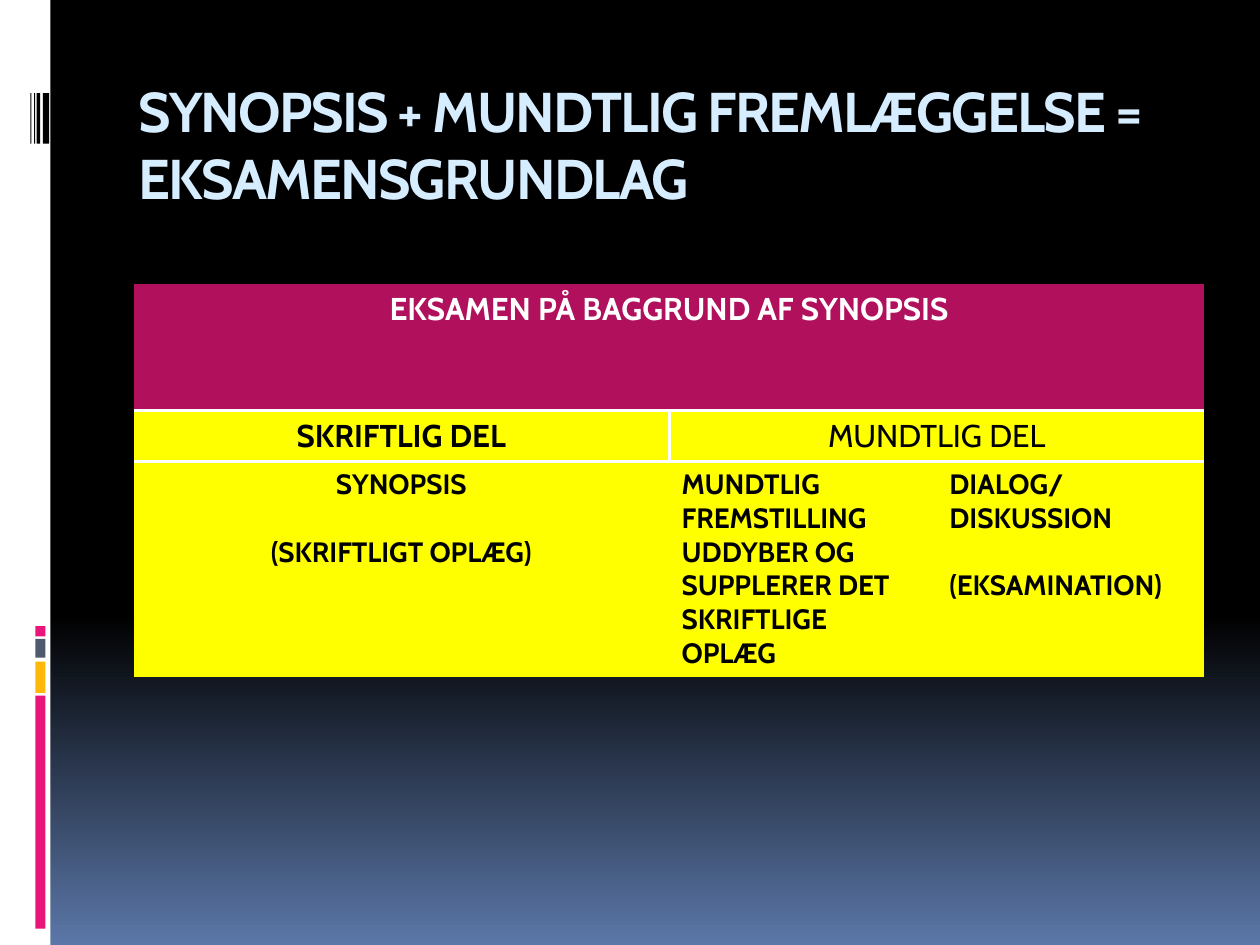
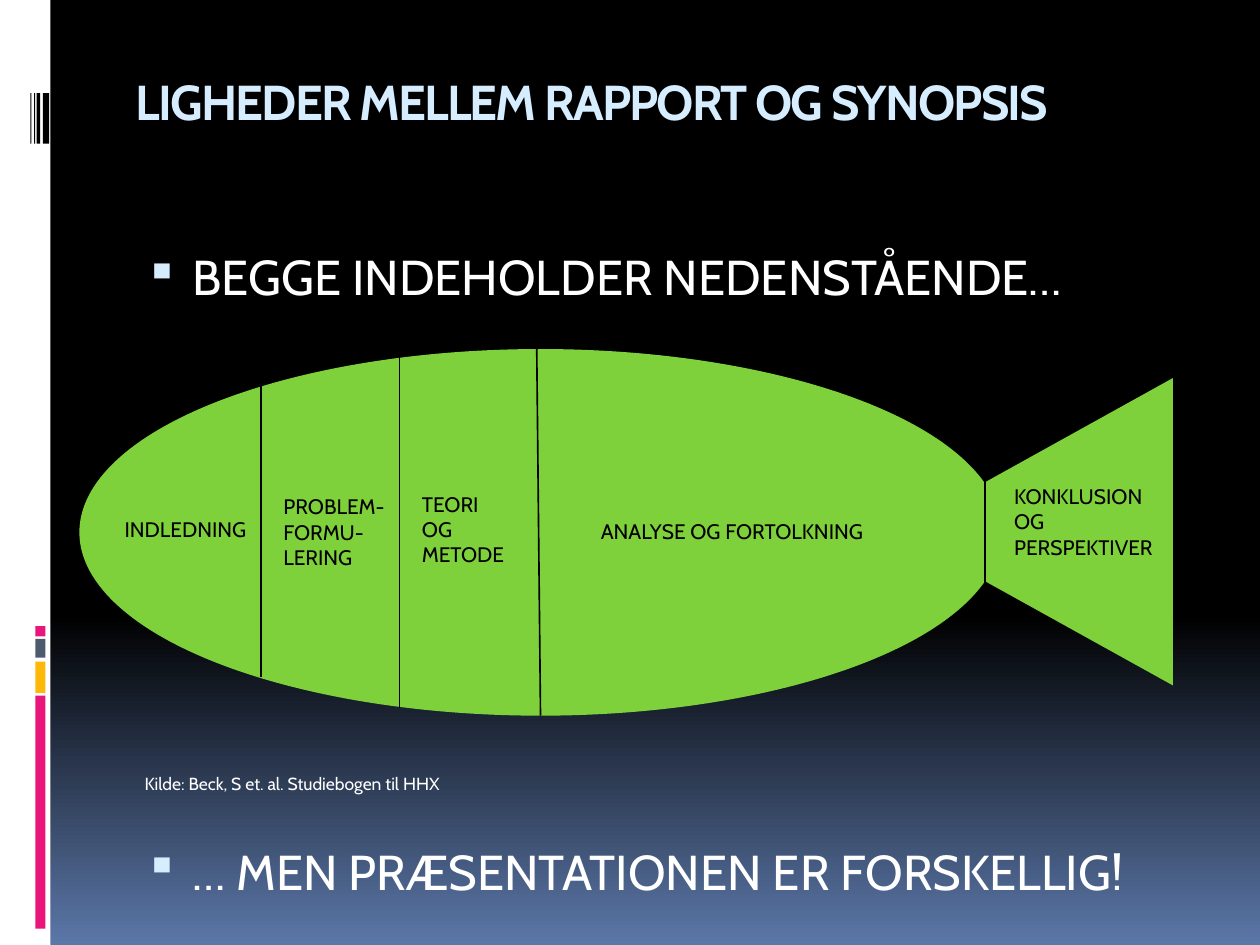
import copy

import lxml.etree
import pptx
import pptx.dml.color
import pptx.enum.shapes
import pptx.enum.text
import pptx.oxml
import pptx.oxml.ns
import pptx.util

Inches = pptx.util.Inches
Pt = pptx.util.Pt
Shape = pptx.enum.shapes.MSO_SHAPE
Align = pptx.enum.text.PP_ALIGN
qn = pptx.oxml.ns.qn

FONT = "Cabin"
BLACK, WHITE, YELLOW = "000000", "FFFFFF", "FFFF00"
SKY, ICE, SLATE = "5B77A8", "D6ECFF", "4E5B6F"
PINK, AMBER, BERRY, GREEN = "EA157A", "FEB80A", "B0105C", "7FD13B"
NO_STYLE = "{2D5ABB26-0587-4C30-8999-92F81FD0307C}"


def color(hex_code):
    """Turn a hex string into a colour."""
    return pptx.dml.color.RGBColor.from_string(hex_code)


def place(box, left, top, width, height):
    """Convert a rectangle inside a box to slide lengths."""
    return [Inches(n) for n in (box[0] + left, box[1] + top, width, height)]


def add_span(para, text, size, hex_code, bold=False):
    """Add one styled run to a paragraph."""
    span = para.add_run()
    span.text = text
    span.font.name = FONT
    span.font.size = Pt(size)
    span.font.bold = bold
    span.font.color.rgb = color(hex_code)
    return span


def next_para(frame, index):
    """Return the first paragraph or append another."""
    return frame.add_paragraph() if index else frame.paragraphs[0]


def add_text_frame(page, area):
    """Add a wrapping text box and return its frame."""
    frame = page.shapes.add_textbox(*area).text_frame
    frame.word_wrap = True
    return frame


def add_solid(page, kind, area, hex_code):
    """Add a flat preset shape without outline."""
    shape = page.shapes.add_shape(kind, *area)
    shape.shadow.inherit = False
    shape.fill.solid()
    shape.fill.fore_color.rgb = color(hex_code)
    shape.line.fill.background()
    return shape


def add_divider(page, box, start, end):
    """Draw a thin black line between two points in a box."""
    ends = [Inches(box[i % 2] + n) for i, n in enumerate(start + end)]
    line = page.shapes.add_connector(pptx.enum.shapes.MSO_CONNECTOR.STRAIGHT, *ends)
    line.line.color.rgb = color(BLACK)
    line.line.width = Pt(0.94)
    lxml.etree.SubElement(line.element.spPr, qn("a:effectLst"))


def paint_background(page):
    """Fade the page from black to blue at the bottom."""
    fill = page.background.fill
    fill.gradient()
    fill.gradient_angle = 270
    first, last = fill.gradient_stops
    first.color.rgb = color(BLACK)
    first.position = 0
    last.color.rgb = color(SKY)
    last.position = 1
    stops = page.background.element if hasattr(page.background, "element") else page.element
    stop_list = stops.find(".//" + qn("a:gsLst"))
    middle = copy.deepcopy(stop_list[0])
    middle.set("pos", "65000")
    stop_list.insert(1, middle)


def add_rail(page, box):
    """Draw the white side rail with its bars and stripes."""
    add_solid(page, Shape.RECTANGLE, place(box, 0, 0, box[2], box[3]), WHITE)
    for top, height, hex_code in (
        (5.52, 1.85, PINK), (5.25, 0.25, AMBER), (5.07, 0.15, SLATE), (4.97, 0.08, PINK)
    ):
        add_solid(page, Shape.RECTANGLE, place(box, 0.28, top, 0.08, height), hex_code)
    for left, width in ((0.34, 0.05), (0.29, 0.03), (0.27, 0.01), (0.24, 0.01)):
        add_solid(page, Shape.RECTANGLE, place(box, left, 0.74, width, 0.4), BLACK)


def add_title(page, box, lines, size):
    """Write the bold, slightly tightened title."""
    para = add_text_frame(page, place(box, 0, 0, box[2], box[3])).paragraphs[0]
    for index, text in enumerate(lines):
        if index:
            para.add_line_break()
        span = add_span(para, text, size, ICE, True)
        span.font._element.set("spc", "-100")


def start_page(deck, title_box, title_lines, title_size):
    """Add a page with background, rail and title."""
    page = deck.slides.add_slide(deck.slide_layouts[6])
    paint_background(page)
    add_rail(page, (0, 0, 0.4, 7.5))
    add_title(page, title_box, title_lines, title_size)
    return page


def add_border(cell, side):
    """Give one side of a cell a white border."""
    border = pptx.oxml.parse_xml(
        f'<a:{side} xmlns:a="{pptx.oxml.ns.nsuri("a")}" w="25400">'
        f'<a:solidFill><a:srgbClr val="{WHITE}"/></a:solidFill></a:{side}>'
    )
    cell._tc.get_or_add_tcPr().insert(0, border)


def fill_cell(cell, lines, size, hex_code, bold, align):
    """Write cell lines, each given with the space before it."""
    for index, (text, gap) in enumerate(lines):
        para = next_para(cell.text_frame, index)
        para.alignment = align
        para.space_before = Pt(gap)
        add_span(para, text, size, hex_code, bold)


def add_exam_table(page, box):
    """Build the table of written and oral exam parts."""
    holder = page.shapes.add_table(3, 3, *place(box, 0, 0, box[2], box[3]))
    holder.element.find(".//" + qn("a:tableStyleId")).text = NO_STYLE
    table = holder.table
    table.first_row = table.horz_banding = False
    for column, share in zip(table.columns, (2, 1, 1)):
        column.width = Inches(box[2] * share / 4)
    for row, height in zip(table.rows, (1.01, 0.39, box[3] - 1.4)):
        row.height = Inches(height)
    for row in range(3):
        for column in range(3):
            cell = table.cell(row, column)
            cell.fill.solid()
            cell.fill.fore_color.rgb = color(YELLOW if row else BERRY)
            if row < 2:
                add_border(cell, "lnB")
            if row:
                add_border(cell, "lnT")
    add_border(table.cell(1, 0), "lnR")
    table.cell(0, 0).merge(table.cell(0, 2))
    table.cell(1, 1).merge(table.cell(1, 2))
    blank_line = 19.4
    oral = "MUNDTLIG FREMSTILLING UDDYBER OG SUPPLERER DET SKRIFTLIGE OPLÆG"
    for row, column, lines, size, hex_code, bold, align in (
        (0, 0, [("EKSAMEN PÅ BAGGRUND AF SYNOPSIS", 0)], 18, WHITE, True, Align.CENTER),
        (1, 0, [("SKRIFTLIG DEL", 0)], 18, BLACK, True, Align.CENTER),
        (1, 1, [("MUNDTLIG DEL", 0)], 18, BLACK, False, Align.CENTER),
        (2, 0, [("SYNOPSIS", 0), ("(SKRIFTLIGT OPLÆG)", blank_line)],
         16, BLACK, True, Align.CENTER),
        (2, 1, [(oral, 0)], 16, BLACK, True, Align.LEFT),
        (2, 2, [("DIALOG/", 0), ("DISKUSSION", 0), ("(EKSAMINATION)", blank_line)],
         16, BLACK, True, Align.LEFT),
    ):
        fill_cell(table.cell(row, column), lines, size, hex_code, bold, align)


def set_indent(para, margin, hanging):
    """Set the left margin and the first-line indent."""
    props = para._p.get_or_add_pPr()
    props.set("marL", str(Inches(margin)))
    props.set("indent", str(Inches(hanging)))
    return props


def add_bullet(para):
    """Give a paragraph a hanging square bullet."""
    props = set_indent(para, 0.45, -0.38)
    tint = lxml.etree.SubElement(props, qn("a:buClr"))
    lxml.etree.SubElement(tint, qn("a:srgbClr"), val=ICE)
    lxml.etree.SubElement(props, qn("a:buSzPct"), val="95000")
    lxml.etree.SubElement(props, qn("a:buChar"), char="▪")


def add_body(page, box):
    """Write the two bullets and the source around the fish."""
    frame = add_text_frame(page, place(box, 0, 0, box[2], box[3]))
    for index, (text, size, gap, bulleted) in enumerate((
        ("BEGGE INDEHOLDER NEDENSTÅENDE…", 28, 0, True),
        ("Kilde: Beck, S et. al. Studiebogen til HHX", 10, 267, False),
        ("… MEN PRÆSENTATIONEN ER FORSKELLIG!", 28, 27, True),
    )):
        para = next_para(frame, index)
        para.space_before = Pt(gap)
        if bulleted:
            add_bullet(para)
        else:
            set_indent(para, 0.07, 0)
        add_span(para, text, size, WHITE)


def add_fish(page, box):
    """Draw the fish whose sections name the report parts."""
    add_solid(page, Shape.OVAL, place(box, 0, 0, 7.32, box[3]), GREEN)
    tail = add_solid(
        page, Shape.ISOSCELES_TRIANGLE, place(box, 6.36, 0.35, 2.44, 2.2), GREEN
    )
    tail.rotation = 270
    for start, end in (
        ((1.44, 0.23), (1.44, 2.6)),
        ((2.54, 0.02), (2.54, 2.85)),
        ((3.63, 0), (3.66, 2.91)),
        ((7.19, 0.96), (7.19, 1.99)),
    ):
        add_divider(page, box, start, end)
    for left, top, width, height, lines in (
        (4.04, 1.3, 2.99, 0.3, ["ANALYSE OG FORTOLKNING"]),
        (7.32, 1.02, 1.37, 0.71, ["KONKLUSION OG PERSPEKTIVER"]),
        (2.62, 1.08, 0.95, 0.71, ["TEORI", "OG", "METODE"]),
        (1.52, 1.1, 1.02, 0.71, ["PROBLEM-FORMU-", "LERING"]),
        (0.26, 1.28, 1.18, 0.3, ["INDLEDNING"]),
    ):
        frame = add_text_frame(page, place(box, left, top, width, height))
        for index, text in enumerate(lines):
            add_span(next_para(frame, index), text, 12, BLACK)


def main():
    """Build both slides and save the deck."""
    deck = pptx.Presentation()
    deck.slide_width, deck.slide_height = Inches(10), Inches(7.5)

    exam_title = ["SYNOPSIS + MUNDTLIG FREMLÆGGELSE =", "EKSAMENSGRUNDLAG"]
    exam_page = start_page(deck, (1, 0.56, 8.5, 1), exam_title, 32)
    add_exam_table(exam_page, (1.06, 2.25, 8.5, 3.11))

    fish_title = ["LIGHEDER MELLEM RAPPORT OG SYNOPSIS"]
    fish_page = start_page(deck, (0.98, 0.52, 8.5, 1), fish_title, 28)
    add_body(fish_page, (0.98, 1.91, 8.5, 5))
    add_fish(fish_page, (0.63, 2.77, 8.68, 2.91))

    deck.save("out.pptx")


if __name__ == "__main__":
    main()
